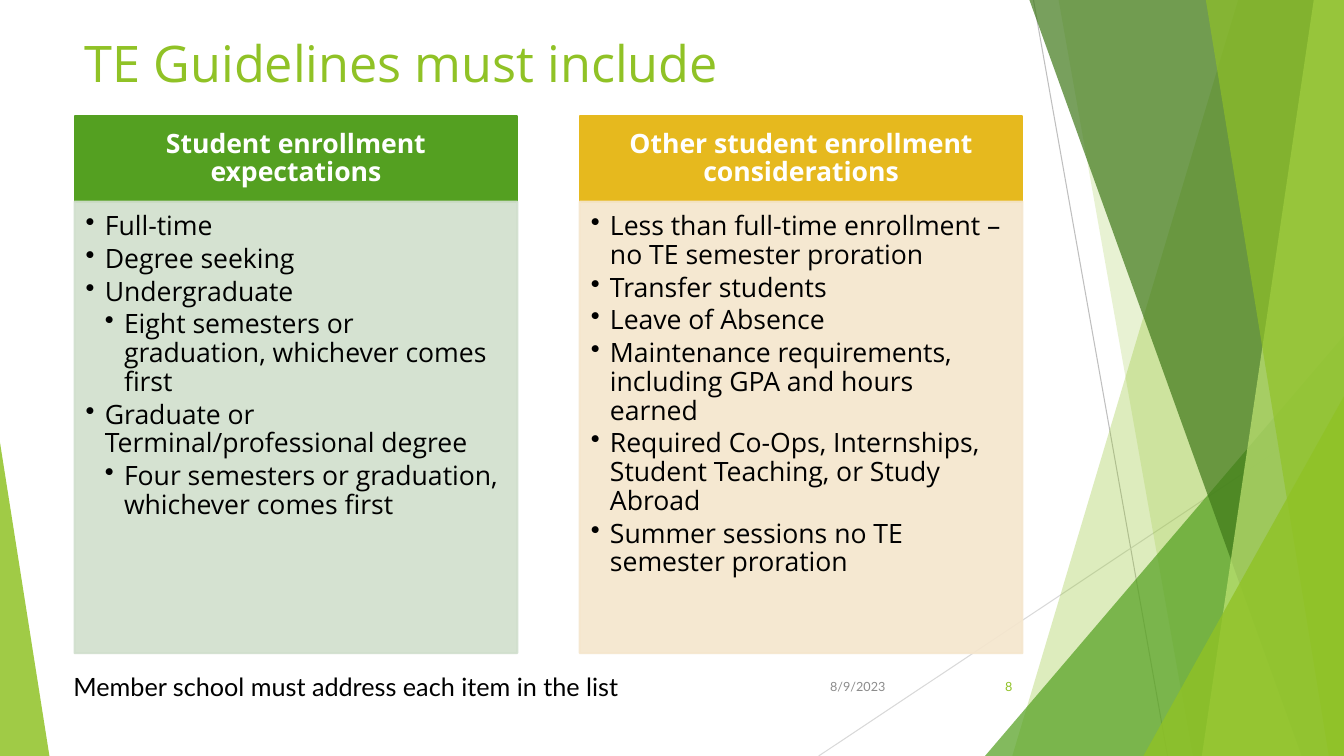
from dataclasses import dataclass

from lxml import etree
from pptx import Presentation
from pptx.dml.color import RGBColor
from pptx.enum.shapes import MSO_CONNECTOR, MSO_SHAPE
from pptx.enum.text import MSO_ANCHOR, MSO_AUTO_SIZE, PP_ALIGN
from pptx.oxml.ns import qn
from pptx.util import Pt

PX = 9144  # EMU per px, 100 px to the inch
WIDTH, HEIGHT = 1333, 750

LINE = MSO_CONNECTOR.STRAIGHT
RECTANGLE, TRIANGLE = MSO_SHAPE.RECTANGLE, MSO_SHAPE.ISOSCELES_TRIANGLE
TOP, MIDDLE = MSO_ANCHOR.TOP, MSO_ANCHOR.MIDDLE
LEFT, CENTER, RIGHT = PP_ALIGN.LEFT, PP_ALIGN.CENTER, PP_ALIGN.RIGHT
NO_AUTOFIT = MSO_AUTO_SIZE.NONE

LIME = RGBColor(0x90, 0xC2, 0x26)
PALE_LIME = RGBColor(0xC0, 0xE4, 0x74)
GREEN = RGBColor(0x54, 0xA0, 0x21)
DARK_GREEN = RGBColor(0x3F, 0x78, 0x19)
PALE_GREEN = RGBColor(0xD1, 0xDF, 0xCD)
GOLD = RGBColor(0xE6, 0xB9, 0x1E)
PALE_GOLD = RGBColor(0xF5, 0xE6, 0xCD)
WHITE = RGBColor(0xFF, 0xFF, 0xFF)
BLACK = RGBColor(0, 0, 0)
GREY = RGBColor(0x8C, 0x8C, 0x8C)
RAY_GREY = RGBColor(0xBF, 0xBF, 0xBF)
LIGHT_RAY_GREY = RGBColor(0xD9, 0xD9, 0xD9)

HEADING_FONT, NOTE_FONT = "Open Sans", "Lato"
CARD_WIDTH, CARD_TOP, HEADER_HEIGHT, BODY_HEIGHT = 439, 115, 85, 448
INDENT = 19


@dataclass(frozen=True)
class Ray:
    start: tuple[int, int]
    end: tuple[int, int]
    color: RGBColor


@dataclass(frozen=True)
class Band:
    """Facet running from the slide's top edge to its bottom and right edges."""
    top_x: int
    bottom_x: int
    color: RGBColor
    opacity: int


@dataclass(frozen=True)
class Wedge:
    left: int
    top: int
    width: int
    apex: float
    color: RGBColor
    opacity: int


@dataclass(frozen=True)
class Item:
    text: str
    level: int = 0


@dataclass(frozen=True)
class Card:
    left: int
    heading: str
    color: RGBColor
    tint: RGBColor
    items: tuple[Item, ...]


@dataclass(frozen=True)
class Note:
    text: str
    left: int
    width: int
    size: int
    color: RGBColor
    align: PP_ALIGN
    anchor: MSO_ANCHOR


FACETS = (
    Ray((1025, 0), (1158, HEIGHT), RAY_GREY),
    Ray((WIDTH, 403), (812, HEIGHT), LIGHT_RAY_GREY),
    Band(1228, 1004, LIME, 30),
    Band(1050, 1183, LIME, 20),
    Wedge(977, 333, 356, 1, GREEN, 72),
    Band(1021, 1291, DARK_GREEN, 70),
    Band(1303, 1192, PALE_LIME, 70),
    Band(1196, 1318, LIME, 65),
    Wedge(1134, 393, 199, 1, LIME, 80),
    Wedge(0, 439, 49, 0, LIME, 85),
)

CARDS = (
    Card(74, "Student enrollment expectations", GREEN, PALE_GREEN, (
        Item("Full-time"),
        Item("Degree seeking"),
        Item("Undergraduate"),
        Item("Eight semesters or graduation, whichever comes first", 1),
        Item("Graduate or Terminal/professional degree"),
        Item("Four semesters or graduation, whichever comes first", 1),
    )),
    Card(575, "Other student enrollment considerations", GOLD, PALE_GOLD, (
        Item("Less than full-time enrollment – no TE semester proration"),
        Item("Transfer students"),
        Item("Leave of Absence"),
        Item("Maintenance requirements, including GPA and hours earned"),
        Item("Required Co-Ops, Internships, Student Teaching, or Study Abroad"),
        Item("Summer sessions no TE semester proration"),
    )),
)

NOTES = (
    Note("8/9/2023", 788, 100, 9, GREY, RIGHT, MIDDLE),
    Note("8", 939, 75, 9, LIME, RIGHT, MIDDLE),
    Note("Member school must address each item in the list", 63, 604, 18, BLACK, LEFT, TOP),
)


def px(*lengths: int) -> list[int]:
    return [length * PX for length in lengths]


def paint(shape, color: RGBColor, opacity: int = 100, outlined: bool = False) -> None:
    shape.shadow.inherit = False
    shape.fill.solid()
    shape.fill.fore_color.rgb = color
    if outlined:
        shape.line.color.rgb = color
        shape.line.width = Pt(1.5)
    else:
        shape.line.fill.background()
    if opacity < 100:
        for tone in shape._element.spPr.iter(qn("a:srgbClr")):
            etree.SubElement(tone, qn("a:alpha"), val=str(opacity * 1000))


def set_frame(frame, anchor: MSO_ANCHOR, insets: tuple[int, ...]) -> None:
    frame.word_wrap = True
    frame.auto_size = NO_AUTOFIT
    frame.vertical_anchor = anchor
    frame.margin_left, frame.margin_top, frame.margin_right, frame.margin_bottom = px(*insets)


def write(paragraph, text: str, font: str, size: int, color: RGBColor,
          align: PP_ALIGN = LEFT, bold: bool = False) -> None:
    paragraph.text = text
    paragraph.alignment = align
    paragraph.font.name, paragraph.font.size = font, Pt(size)
    paragraph.font.bold = bold
    paragraph.font.color.rgb = color


def add_bullet(paragraph, level: int) -> None:
    paragraph.level = level
    properties = paragraph._p.get_or_add_pPr()
    properties.set("marL", str(INDENT * (level + 1) * PX))
    properties.set("indent", str(-INDENT * PX))
    bullet = etree.Element(qn("a:buChar"), char="•")
    properties.find(qn("a:defRPr")).addprevious(bullet)


def draw_facet(shapes, facet: Ray | Band | Wedge) -> None:
    if isinstance(facet, Ray):
        ray = shapes.add_connector(LINE, *px(*facet.start, *facet.end))
        ray.line.color.rgb = facet.color
        ray.line.width = Pt(0.75)
        etree.SubElement(ray._element.spPr, qn("a:effectLst"))
    elif isinstance(facet, Band):
        outline = shapes.build_freeform(facet.top_x, 0, scale=PX)
        outline.add_line_segments([(WIDTH, 0), (WIDTH, HEIGHT), (facet.bottom_x, HEIGHT)])
        paint(outline.convert_to_shape(), facet.color, facet.opacity)
    else:
        wedge = shapes.add_shape(
            TRIANGLE, *px(facet.left, facet.top, facet.width, HEIGHT - facet.top))
        wedge.adjustments[0] = facet.apex
        paint(wedge, facet.color, facet.opacity)


def draw_card(shapes, card: Card) -> None:
    header = shapes.add_shape(RECTANGLE, *px(card.left, CARD_TOP, CARD_WIDTH, HEADER_HEIGHT))
    paint(header, card.color, outlined=True)
    set_frame(header.text_frame, MIDDLE, (15, 8, 15, 8))
    heading = header.text_frame.paragraphs[0]
    write(heading, card.heading, HEADING_FONT, 19, WHITE, CENTER, bold=True)
    heading.line_spacing = 0.9

    body = shapes.add_shape(
        RECTANGLE, *px(card.left, CARD_TOP + HEADER_HEIGHT, CARD_WIDTH, BODY_HEIGHT))
    paint(body, card.tint, 90, outlined=True)
    frame = body.text_frame
    set_frame(frame, TOP, (11, 11, 15, 17))
    for index, item in enumerate(card.items):
        paragraph = frame.add_paragraph() if index else frame.paragraphs[0]
        write(paragraph, item.text, HEADING_FONT, 19, BLACK)
        paragraph.line_spacing = 0.9
        paragraph.space_after = Pt(2.85)
        add_bullet(paragraph, item.level)


def draw_note(shapes, note: Note) -> None:
    box = shapes.add_textbox(*px(note.left, 661, note.width, 40))
    set_frame(box.text_frame, note.anchor, (10, 5, 10, 5))
    write(box.text_frame.paragraphs[0], note.text, NOTE_FONT, note.size, note.color, note.align)


def main() -> None:
    deck = Presentation()
    deck.slide_width, deck.slide_height = px(WIDTH, HEIGHT)
    slide = deck.slides.add_slide(deck.slide_layouts[5])

    # Title
    title = slide.shapes.title
    title.left, title.top, title.width, title.height = px(74, 27, 940, 76)
    set_frame(title.text_frame, TOP, (10, 5, 10, 5))
    write(title.text_frame.paragraphs[0], "TE Guidelines must include", HEADING_FONT, 36, LIME)

    # Facets, cards and footer
    for facet in FACETS:
        draw_facet(slide.shapes, facet)
    for card in CARDS:
        draw_card(slide.shapes, card)
    for note in NOTES:
        draw_note(slide.shapes, note)

    deck.save("out.pptx")


if __name__ == "__main__":
    main()
